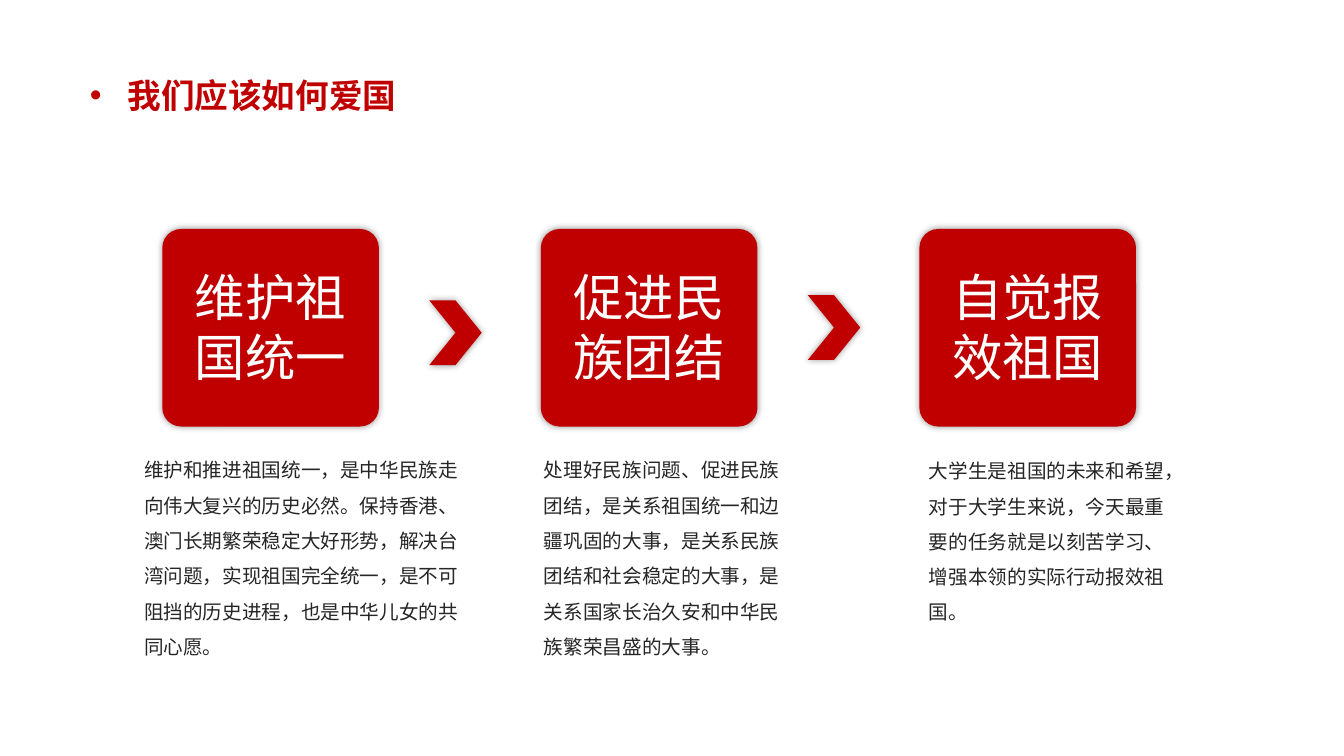
from lxml.etree import SubElement
from pptx import Presentation
from pptx.dml.color import RGBColor
from pptx.enum.shapes import MSO_SHAPE as SHAPE
from pptx.enum.text import MSO_ANCHOR as ANCHOR, MSO_AUTO_SIZE as AUTO, PP_ALIGN as ALIGN
from pptx.oxml.ns import qn
from pptx.util import Cm, Pt

TITLE = "我们应该如何爱国"
CARDS = [
    ("维护祖国统一",
     "维护和推进祖国统一，是中华民族走向伟大复兴的历史必然。保持香港、澳门长期繁荣稳定大好形势，解决台湾问题，实现祖国完全统一，是不可阻挡的历史进程，也是中华儿女的共同心愿。",
     (3.38, 11.13, 8.66, 5.54)),
    ("促进民族团结",
     "处理好民族问题、促进民族团结，是关系祖国统一和边疆巩固的大事，是关系民族团结和社会稳定的大事，是关系国家长治久安和中华民族繁荣昌盛的大事。",
     (13.46, 11.13, 6.88, 5.54)),
    ("自觉报效祖国",
     "大学生是祖国的未来和希望，对于大学生来说，今天最重要的任务就是以刻苦学习、增强本领的实际行动报效祖国。",
     (23.16, 11.15, 6.88, 4.65)),
]
CHEVRON_TOPS = [7.57, 7.44]
COLORS = {"red": "C00000", "white": "FFFFFF", "text": "262626", "shadow": "000000"}
FONT = "Arial"
CARD_LEFT, CARD_TOP, CARD_W, CARD_H = 4.09, 5.77, 5.46, 4.98
STEP = 9.54
LABEL_W, LABEL_H, LABEL_TOP = 4.47, 3.33, 6.58
CHEVRON_LEFT, CHEVRON_W, CHEVRON_H = 10.82, 1.32, 1.63


def color(name):
    return RGBColor.from_string(COLORS[name])


def add_red_shape(shapes, kind, box):
    sp = shapes.add_shape(kind, *map(Cm, box))
    sp.fill.solid()
    sp.fill.fore_color.rgb = color("red")
    sp.line.fill.background()
    sp.shadow.inherit = False
    effects = sp._element.spPr.find(qn("a:effectLst"))
    shadow = SubElement(effects, qn("a:outerShdw"), blurRad=str(Pt(5)), dist="0",
                        dir="0", algn="ctr", rotWithShape="0")
    rgb = SubElement(shadow, qn("a:srgbClr"), val=COLORS["shadow"])
    SubElement(rgb, qn("a:alpha"), val="40000")
    return sp


def write(sp, text, size, name, align, spacing=1.0, bold=False):
    tf = sp.text_frame
    tf.word_wrap = True
    tf.auto_size = AUTO.SHAPE_TO_FIT_TEXT
    tf.vertical_anchor = ANCHOR.TOP
    p = tf.paragraphs[0]
    p.alignment = align
    p.line_spacing = spacing
    r = p.add_run()
    r.text = text
    r.font.name = FONT
    r.font.size = Pt(size)
    r.font.bold = bold
    r.font.color.rgb = color(name)
    return p


def add_text(shapes, box, *args, **kwargs):
    write(shapes.add_textbox(*map(Cm, box)), *args, **kwargs)


def add_title(slide):
    sp = slide.shapes.title
    sp.left, sp.top, sp.width, sp.height = map(Cm, (2.01, 1.75, 8.81, 1.27))
    p = write(sp, TITLE, 24, "red", ALIGN.JUSTIFY, bold=True)
    pPr = p._p.get_or_add_pPr()
    pPr.set("marL", str(Cm(0.95)))
    pPr.set("indent", str(Cm(-0.95)))
    SubElement(pPr, qn("a:buFont"), typeface=FONT)
    SubElement(pPr, qn("a:buChar"), char="•")


def main():
    prs = Presentation()
    prs.slide_width, prs.slide_height = Cm(33.87), Cm(19.05)
    slide = prs.slides.add_slide(prs.slide_layouts[5])
    add_title(slide)

    for i, top in enumerate(CHEVRON_TOPS):
        box = (CHEVRON_LEFT + i * STEP, top, CHEVRON_W, CHEVRON_H)
        add_red_shape(slide.shapes, SHAPE.CHEVRON, box)

    for i, (label, body, body_box) in enumerate(CARDS):
        left = CARD_LEFT + i * STEP
        card = slide.shapes.add_group_shape().shapes
        sp = add_red_shape(card, SHAPE.ROUNDED_RECTANGLE, (left, CARD_TOP, CARD_W, CARD_H))
        sp.adjustments[0] = 0.096
        label_left = left + (CARD_W - LABEL_W) / 2
        add_text(card, (label_left, LABEL_TOP, LABEL_W, LABEL_H), label, 36, "white", ALIGN.CENTER)
        add_text(slide.shapes, body_box, body, 14, "text", ALIGN.LEFT, spacing=1.5)

    prs.save("out.pptx")


if __name__ == "__main__":
    main()
